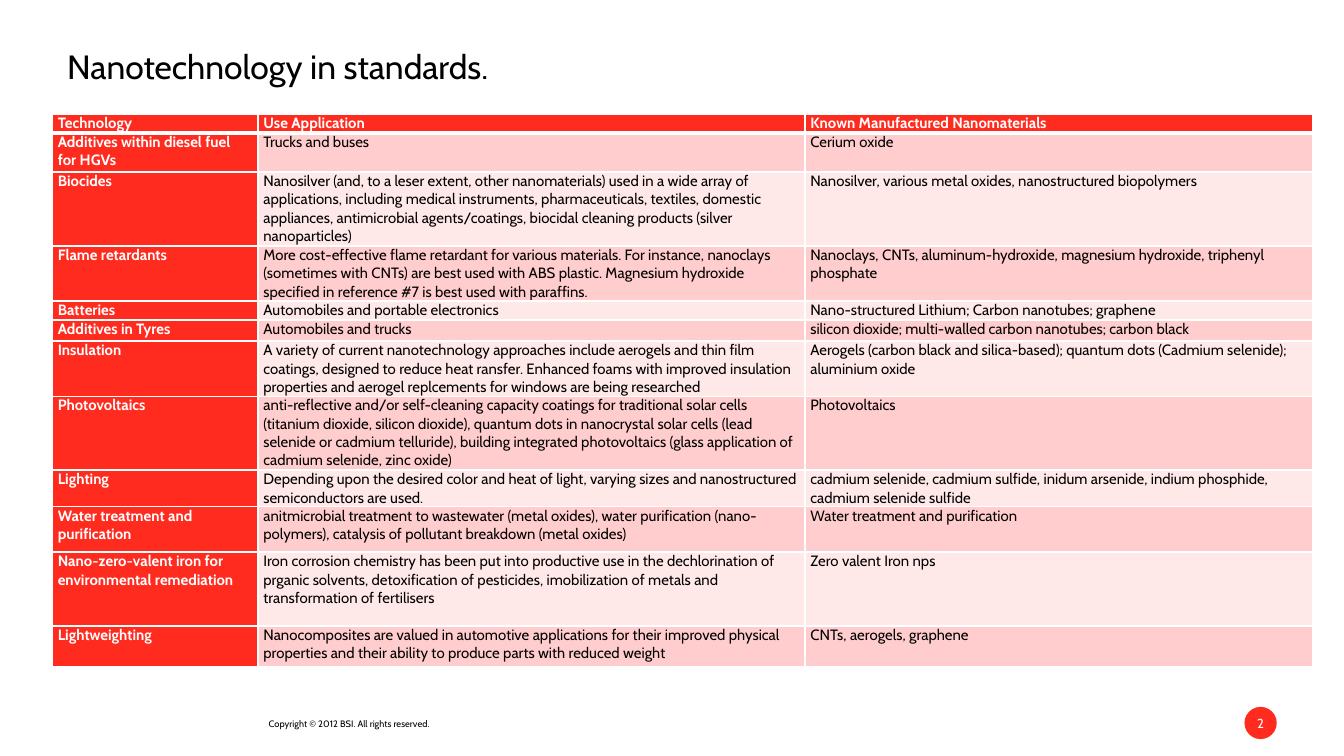
import pptx
import pptx.dml.color
import pptx.enum.shapes
import pptx.enum.text
import pptx.oxml
import pptx.oxml.ns
import pptx.util

Inches, Pt = pptx.util.Inches, pptx.util.Pt
ALIGN, ANCHOR = pptx.enum.text.PP_ALIGN, pptx.enum.text.MSO_ANCHOR

COLORS = {"red": "FF2B1F", "pink": "FFCDCD", "pale": "FFE8E8",
          "white": "FFFFFF", "black": "000000"}
FONT = "Cabin"

COLUMN_WIDTHS = [1.53, 4.07, 3.78]
ROW_HEIGHTS = [0.14, 0.29, 0.55, 0.41, 0.14, 0.16,
               0.41, 0.55, 0.27, 0.34, 0.55, 0.3]
ROWS = [
    ("Technology", "Use Application", "Known Manufactured Nanomaterials"),
    ("Additives within diesel fuel for HGVs", "Trucks and buses", "Cerium oxide"),
    ("Biocides",
     "Nanosilver (and, to a leser extent, other nanomaterials) used in a wide array of "
     "applications, including medical instruments, pharmaceuticals, textiles, domestic "
     "appliances, antimicrobial agents/coatings, biocidal cleaning products (silver "
     "nanoparticles)",
     "Nanosilver, various metal oxides, nanostructured biopolymers"),
    ("Flame retardants",
     "More cost-effective flame retardant for various materials. For instance, nanoclays "
     "(sometimes with CNTs) are best used with ABS plastic. Magnesium hydroxide "
     "specified in reference #7 is best used with paraffins.",
     "Nanoclays, CNTs, aluminum-hydroxide, magnesium hydroxide, triphenyl phosphate"),
    ("Batteries", "Automobiles and portable electronics",
     "Nano-structured Lithium; Carbon nanotubes; graphene"),
    ("Additives in Tyres", "Automobiles and trucks",
     "silicon dioxide; multi-walled carbon nanotubes; carbon black"),
    ("Insulation",
     "A variety of current nanotechnology approaches include aerogels and thin film "
     "coatings, designed to reduce heat ransfer. Enhanced foams with improved insulation "
     "properties and aerogel replcements for windows are being researched",
     "Aerogels (carbon black and silica-based); quantum dots (Cadmium selenide); "
     "aluminium oxide"),
    ("Photovoltaics",
     "anti-reflective and/or self-cleaning capacity coatings for traditional solar cells "
     "(titanium dioxide, silicon dioxide), quantum dots in nanocrystal solar cells (lead "
     "selenide or cadmium telluride), building integrated photovoltaics (glass application "
     "of cadmium selenide, zinc oxide)",
     "Photovoltaics"),
    ("Lighting",
     "Depending upon the desired color and heat of light, varying sizes and nanostructured "
     "semiconductors are used.",
     "cadmium selenide, cadmium sulfide, inidum arsenide, indium phosphide, "
     "cadmium selenide sulfide"),
    ("Water treatment and purification",
     "anitmicrobial treatment to wastewater (metal oxides), water purification "
     "(nano-polymers), catalysis of pollutant breakdown (metal oxides)",
     "Water treatment and purification"),
    ("Nano-zero-valent iron for environmental remediation",
     "Iron corrosion chemistry has been put into productive use in the dechlorination of "
     "prganic solvents, detoxification of pesticides, imobilization of metals and "
     "transformation of fertilisers",
     "Zero valent Iron nps"),
    ("Lightweighting",
     "Nanocomposites are valued in automotive applications for their improved physical "
     "properties and their ability to produce parts with reduced weight",
     "CNTs, aerogels, graphene"),
]


def rgb(name):
    return pptx.dml.color.RGBColor.from_string(COLORS[name])


def write(tf, text, size=8, color="black", bold=False, align=ALIGN.LEFT):
    tf.word_wrap = True
    p = tf.paragraphs[0]
    p.alignment = align
    r = p.add_run()
    r.text = text
    r.font.name, r.font.size, r.font.bold = FONT, Pt(size), bold
    r.font.color.rgb = rgb(color)


def set_borders(cell, **widths):
    """Draw white cell borders; widths in points keyed by side L, R, T, B."""
    tc_pr = cell._tc.get_or_add_tcPr()
    for i, side in enumerate("LRTB"):
        tc_pr.insert(i, pptx.oxml.parse_xml(
            f'<a:ln{side} {pptx.oxml.ns.nsdecls("a")} w="{Pt(widths.get(side, 1))}">'
            f'<a:solidFill><a:srgbClr val="{COLORS["white"]}"/></a:solidFill>'
            f'</a:ln{side}>'))


class SlideBuilder:
    """Holds the slide and draws its elements in the house style."""

    def __init__(self, slide):
        self.slide = slide

    def clear_margins(self, tf):
        tf.margin_left = tf.margin_top = tf.margin_right = tf.margin_bottom = 0

    def text(self, box, text, **style):
        sp = self.slide.shapes.add_textbox(*map(Inches, box))
        self.clear_margins(sp.text_frame)
        write(sp.text_frame, text, **style)

    def badge(self, box, text, **style):
        sp = self.slide.shapes.add_shape(
            pptx.enum.shapes.MSO_SHAPE.OVAL, *map(Inches, box))
        sp.shadow.inherit = False
        sp.fill.solid()
        sp.fill.fore_color.rgb = rgb("red")
        sp.line.fill.background()
        self.clear_margins(sp.text_frame)
        sp.text_frame.vertical_anchor = ANCHOR.MIDDLE
        write(sp.text_frame, text, align=ALIGN.CENTER, **style)

    def table(self, left, top, widths, heights, rows):
        table = self.slide.shapes.add_table(
            len(rows), len(widths), Inches(left), Inches(top),
            Inches(sum(widths)), Inches(sum(heights))).table
        for column, width in zip(table.columns, widths):
            column.width = Inches(width)
        for i, (height, texts) in enumerate(zip(heights, rows)):
            table.rows[i].height = Inches(height)
            for j, text in enumerate(texts):
                self.cell(table.cell(i, j), text, i, j)

    def cell(self, cell, text, row, column):
        heading = row == 0 or column == 0
        fill = "red" if heading else "pink" if row % 2 else "pale"
        cell.margin_left = cell.margin_right = Inches(0.04)
        cell.margin_top = cell.margin_bottom = 0
        cell.fill.solid()
        cell.fill.fore_color.rgb = rgb(fill)
        set_borders(cell, T=3 if row == 1 else 1, B=3 if row == 0 else 1)
        write(cell.text_frame, text, bold=heading,
              color="white" if heading else "black")


def main():
    prs = pptx.Presentation()
    prs.slide_width = Inches(10)
    prs.slide_height = prs.slide_width * 9 // 16
    s = SlideBuilder(prs.slides.add_slide(prs.slide_layouts[6]))
    s.text((2, 5.34, 1.34, 0.09), "Copyright © 2012 BSI. All rights reserved.", size=5)
    s.badge((9.26, 5.26, 0.24, 0.24), "2", size=7, color="white")
    s.text((0.5, 0.34, 9, 0.39), "Nanotechnology in standards.", size=18)
    s.table(0.39, 0.85, COLUMN_WIDTHS, ROW_HEIGHTS, ROWS)
    prs.save("out.pptx")


if __name__ == "__main__":
    main()
